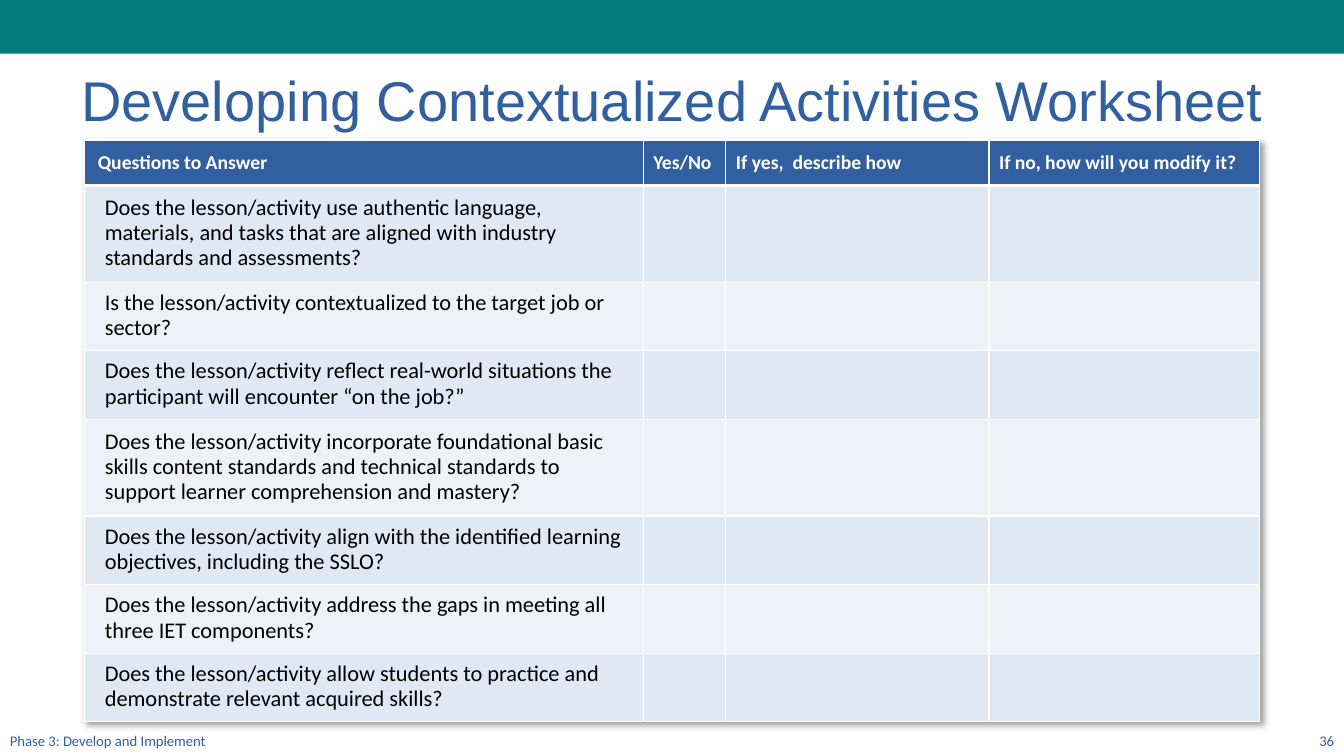
"""Build the contextualized activities worksheet slide."""
from lxml.etree import SubElement
from pptx import Presentation
from pptx.dml.color import RGBColor
from pptx.enum.shapes import MSO_SHAPE
from pptx.enum.text import MSO_ANCHOR as ANCHOR, PP_ALIGN as ALIGN
from pptx.oxml import parse_xml
from pptx.oxml.ns import nsdecls, qn
from pptx.util import Inches, Pt

TEAL = RGBColor(0x04, 0x7C, 0x7C)
BLUE = RGBColor(0x31, 0x5F, 0x9F)
WHITE = RGBColor(0xFF, 0xFF, 0xFF)
BLACK = RGBColor(0x00, 0x00, 0x00)
BANDS = (RGBColor(0xE0, 0xE8, 0xF4), RGBColor(0xEE, 0xF2, 0xF8))

WIDTH, HEIGHT = 13.33, 7.5
COLUMNS = (41.56, 6.15, 19.58, 20.1)
HEADER_ROW, TWO_LINES, THREE_LINES = 6, 9.07, 12.8
HEADERS = ("Questions to Answer", "Yes/No", "If yes,  describe how",
           "If no, how will you modify it?")
QUESTIONS = (
    ("Does the lesson/activity use authentic language, materials, and tasks that "
     "are aligned with industry standards and assessments?", THREE_LINES),
    ("Is the lesson/activity contextualized to the target job or sector?", TWO_LINES),
    ("Does the lesson/activity reflect real-world situations the participant will "
     "encounter “on the job?”", TWO_LINES),
    ("Does the lesson/activity incorporate foundational basic skills content "
     "standards and technical standards to support learner comprehension and "
     "mastery?", THREE_LINES),
    ("Does the lesson/activity align with the identified learning objectives, "
     "including the SSLO?", TWO_LINES),
    ("Does the lesson/activity address the gaps in meeting all three IET "
     "components?", TWO_LINES),
    ("Does the lesson/activity allow students to practice and demonstrate relevant "
     "acquired skills?", TWO_LINES),
)


def x(percent):
    """Return a share of the slide's width."""
    return Inches(WIDTH * percent / 100)


def y(percent):
    """Return a share of the slide's height."""
    return Inches(HEIGHT * percent / 100)


def style(p, size, color, font="Calibri", bold=False):
    """Format every run of a paragraph."""
    for r in p.runs:
        r.font.name, r.font.size, r.font.bold = font, Pt(size), bold
        r.font.color.rgb = color


def add_band(s):
    """Draw the band across the top."""
    sp = s.shapes.add_shape(MSO_SHAPE.RECTANGLE, 0, 0, x(100), y(7.1))
    sp.shadow.inherit = False
    sp.fill.solid()
    sp.fill.fore_color.rgb = TEAL
    sp.line.fill.background()


def add_text(s, text, box, size, align, anchor, font="Calibri"):
    """Add one line of blue text in a box given in percent."""
    left, top, width, height = box
    tf = s.shapes.add_textbox(x(left), y(top), x(width), y(height)).text_frame
    tf.word_wrap, tf.vertical_anchor = True, anchor
    p = tf.paragraphs[0]
    p.text, p.alignment = text, align
    style(p, size, BLUE, font)
    return p


def paint_cell(cell, color, bottom=1):
    """Fill a cell and give it white borders."""
    cell.vertical_anchor = ANCHOR.MIDDLE
    pr = cell._tc.get_or_add_tcPr()
    for side, width in (("L", 1), ("R", 1), ("T", 1), ("B", bottom)):
        ln = SubElement(pr, qn(f"a:ln{side}"), w=str(Pt(width)))
        fill = SubElement(ln, qn("a:solidFill"))
        SubElement(fill, qn("a:srgbClr"), val=str(WHITE))
    cell.fill.solid()
    cell.fill.fore_color.rgb = color


def add_shadow(table):
    """Cast a soft shadow to the lower right of the table."""
    table._tbl.tblPr.insert(0, parse_xml(
        f'<a:effectLst {nsdecls("a")}><a:outerShdw blurRad="50800" dist="38100" '
        'dir="2700000" algn="tl" rotWithShape="0"><a:prstClr val="black">'
        '<a:alpha val="40000"/></a:prstClr></a:outerShdw></a:effectLst>'))


def add_worksheet(s):
    """Add the table of questions with empty answer cells."""
    heights = (HEADER_ROW, *(height for _, height in QUESTIONS))
    table = s.shapes.add_table(len(heights), len(COLUMNS), x(6.3), y(18.53),
                               x(sum(COLUMNS)), y(sum(heights))).table
    add_shadow(table)
    for column, width in zip(table.columns, COLUMNS):
        column.width = x(width)
    for row, height in zip(table.rows, heights):
        row.height = y(height)
    for i, header in enumerate(HEADERS):
        cell = table.cell(0, i)
        paint_cell(cell, BLUE, bottom=3)
        cell.text = header
        style(cell.text_frame.paragraphs[0], 14, WHITE, bold=True)
    table.cell(0, 0).margin_left = Inches(0.13)
    for i, (question, _) in enumerate(QUESTIONS):
        for cell in table.rows[i + 1].cells:
            paint_cell(cell, BANDS[i % 2])
        cell = table.cell(i + 1, 0)
        cell.text = question
        p = cell.text_frame.paragraphs[0]
        p.line_spacing, p.space_before, p.space_after = Pt(18), Pt(2), Pt(2)
        p._p.get_or_add_pPr().set("marL", str(Inches(0.1)))
        style(p, 16, BLACK)


def main():
    """Build and save the slide."""
    prs = Presentation()
    prs.slide_width, prs.slide_height = x(100), y(100)
    s = prs.slides.add_slide(prs.slide_layouts[6])
    add_band(s)
    title = add_text(s, "Developing Contextualized Activities Worksheet",
                     (3.83, 8.8, 92.3, 9.73), 40, ALIGN.CENTER, ANCHOR.MIDDLE, "Arial")
    title.line_spacing = 0.9
    add_worksheet(s)
    add_text(s, "Phase 3: Develop and Implement", (0, 95.6, 33.76, 4.13),
             10.5, ALIGN.LEFT, ANCHOR.BOTTOM)
    add_text(s, "36", (77.5, 95.6, 22.5, 4.13), 10.5, ALIGN.RIGHT, ANCHOR.BOTTOM)
    prs.save("out.pptx")


if __name__ == "__main__":
    main()
